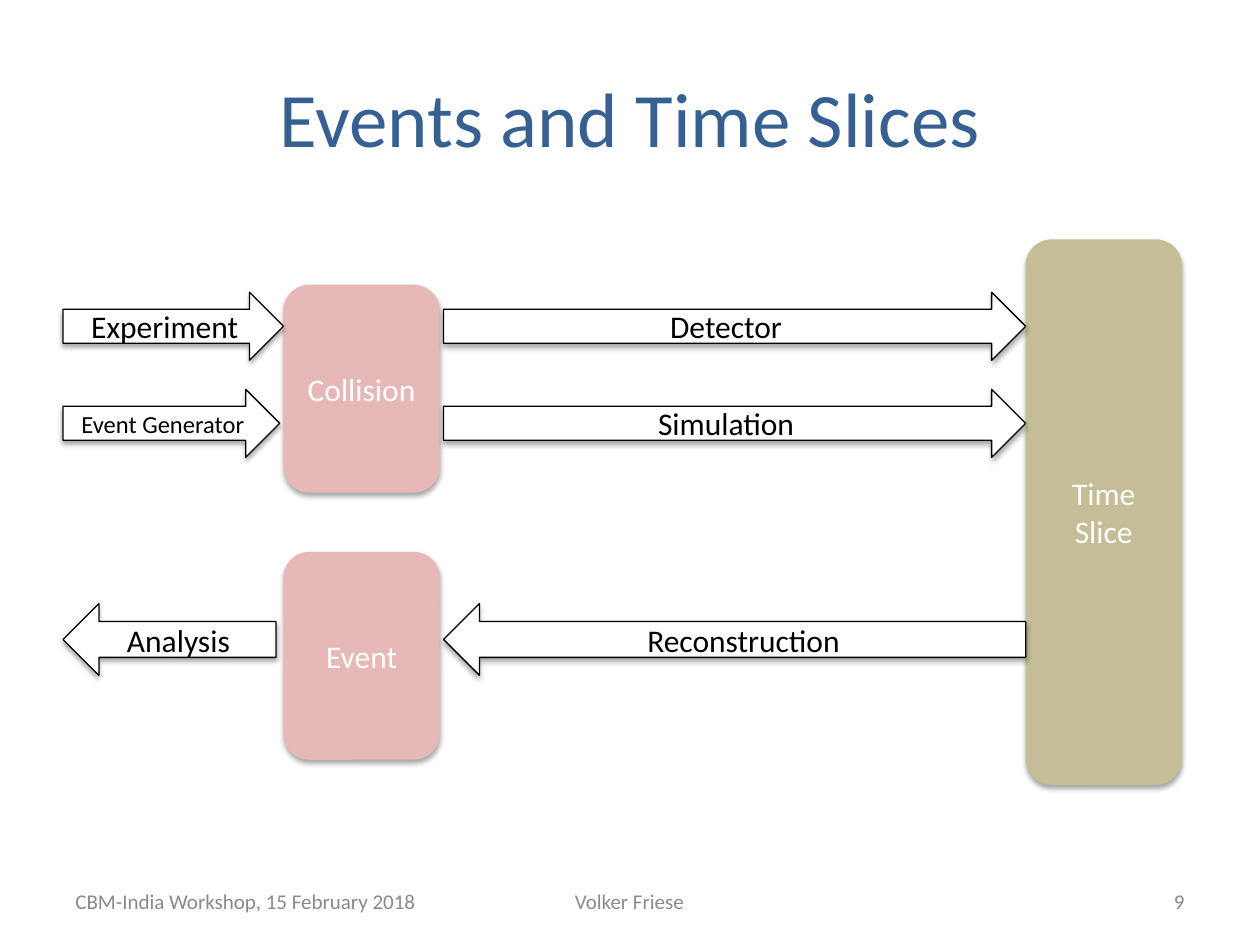
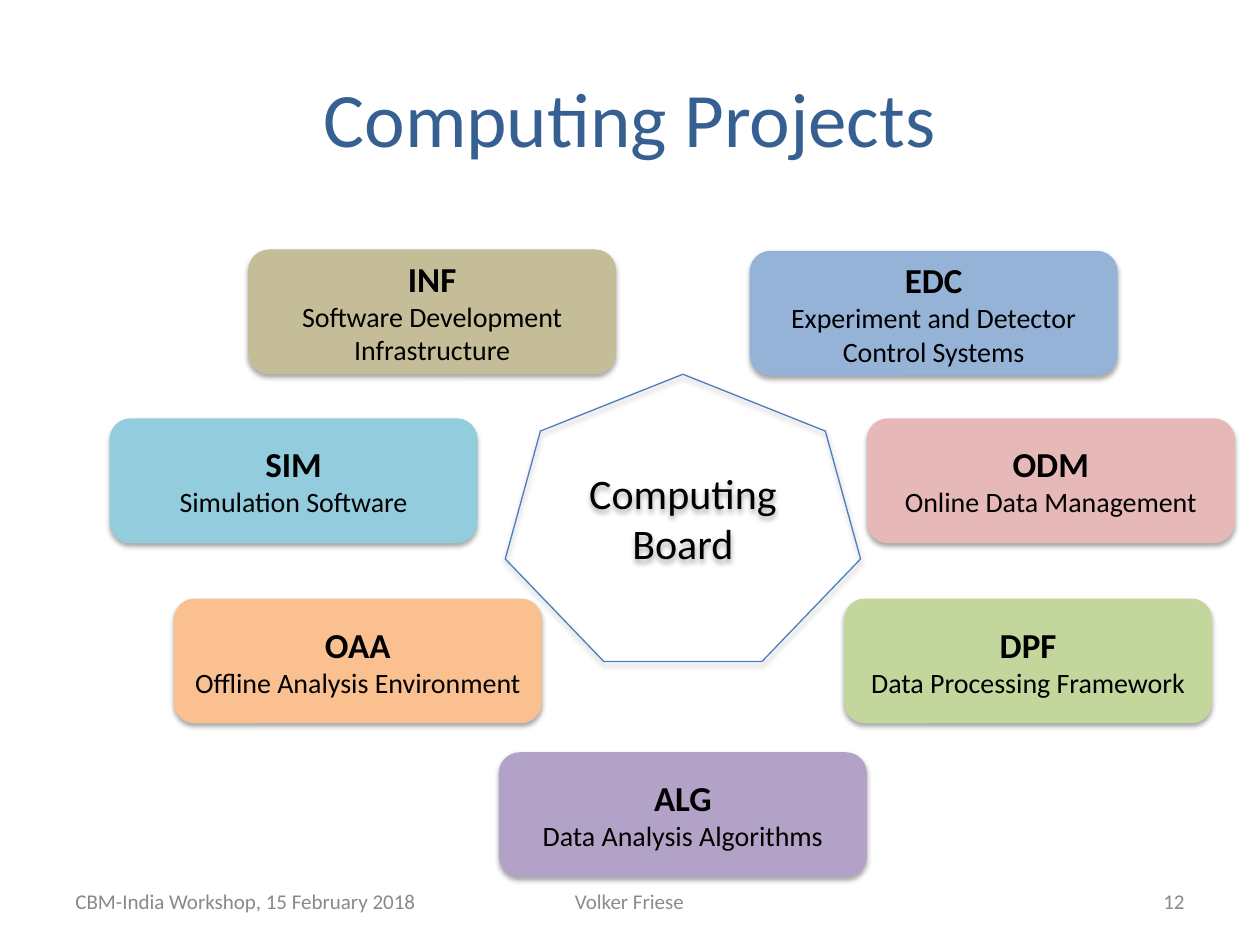
import lxml.etree
import pptx
import pptx.dml.color
import pptx.enum.shapes
import pptx.enum.text
import pptx.oxml.ns
import pptx.util

Inches = pptx.util.Inches
SHAPE = pptx.enum.shapes.MSO_SHAPE
ALIGN = pptx.enum.text.PP_ALIGN
qn = pptx.oxml.ns.qn

# Shared look
FONT = "Calibri"
TITLE_BLUE, OUTLINE_BLUE = "376092", "4B7EBC"
FOOTER_GREY, AUTHOR_GREY = "898989", "8C8C8C"
BLACK, WHITE = "000000", "FFFFFF"
ROSE, SAND = "E6B9B8", "C4BD97"
SKY, GREEN, PURPLE = "95B3D7", "C3D69B", "B3A2C7"
AQUA, ORANGE = "93CDDD", "FAC090"


def rgb(hex_color):
    return pptx.dml.color.RGBColor.from_string(hex_color)


def write(shape, lines, color, align=ALIGN.CENTER):
    """Fill a shape with (text, size, bold) lines, one paragraph each."""
    tf = shape.text_frame
    tf.word_wrap = True
    tf.vertical_anchor = pptx.enum.text.MSO_ANCHOR.MIDDLE
    for i, (text, size, bold) in enumerate(lines):
        p = tf.add_paragraph() if i else tf.paragraphs[0]
        p.text = text
        p.alignment = align
        p.font.name = FONT
        p.font.size = pptx.util.Pt(size)
        p.font.bold = bold
        p.font.color.rgb = rgb(color)


def add_text(s, box, text, size, color, align=ALIGN.CENTER):
    tb = s.shapes.add_textbox(*map(Inches, box))
    write(tb, [(text, size, False)], color, align)


def add_shadow(sp):
    """Soft shadow straight below the shape."""
    sp.shadow.inherit = False
    effects = sp._element.spPr.find(qn("a:effectLst"))
    shadow = lxml.etree.SubElement(
        effects, qn("a:outerShdw"), blurRad=str(pptx.util.Pt(3.1)),
        dist=str(pptx.util.Pt(1.8)), dir="5400000", rotWithShape="0")
    color = lxml.etree.SubElement(shadow, qn("a:srgbClr"), val=BLACK)
    lxml.etree.SubElement(color, qn("a:alpha"), val="35000")


def add_shape(s, kind, box, lines, color, fill=None, line=None):
    sp = s.shapes.add_shape(kind, *map(Inches, box))
    if fill:
        sp.fill.solid()
        sp.fill.fore_color.rgb = rgb(fill)
    else:
        sp.fill.background()
    if line:
        sp.line.color.rgb = rgb(line)
        sp.line.width = pptx.util.Pt(0.75)
    else:
        sp.line.fill.background()
    add_shadow(sp)
    write(sp, lines, color)


def add_stage(s, box, *words, fill):
    lines = [(word, 18, False) for word in words]
    add_shape(s, SHAPE.ROUNDED_RECTANGLE, box, lines, WHITE, fill)


def add_arrow(s, kind, box, text, size=18):
    add_shape(s, kind, box, [(text, size, False)], BLACK, WHITE, BLACK)


def add_project(s, left, top, code, name, fill):
    add_shape(s, SHAPE.ROUNDED_RECTANGLE, (left, top, 2.92, 0.99),
              [(code, 20, True), (name, 16, False)], BLACK, fill)


def new_slide(prs, title, number):
    """Blank slide with the common title and footer."""
    s = prs.slides.add_slide(prs.slide_layouts[6])
    add_text(s, (0.5, 0.3, 9, 1.25), title, 44, TITLE_BLUE)
    add_text(s, (0.5, 6.95, 2.92, 0.4), "CBM-India Workshop, 15 February 2018",
             12, FOOTER_GREY, ALIGN.LEFT)
    add_text(s, (4.35, 6.95, 1.29, 0.4), "Volker Friese", 12, AUTHOR_GREY)
    add_text(s, (7.17, 6.95, 2.33, 0.4), str(number), 12, FOOTER_GREY,
             ALIGN.RIGHT)
    return s


def events_slide(prs):
    s = new_slide(prs, "Events and Time Slices", 9)

    # Data stages
    add_stage(s, (2.25, 2.26, 1.24, 1.65), "Collision", fill=ROSE)
    add_stage(s, (2.25, 4.38, 1.24, 1.65), "Event", fill=ROSE)
    add_stage(s, (8.14, 1.9, 1.24, 4.33), "Time", "Slice", fill=SAND)

    # Each row: direction, top, height, outer arrow, inner arrow
    right, left = SHAPE.RIGHT_ARROW, SHAPE.LEFT_ARROW
    rows = [
        (right, 2.32, 0.54, "Experiment", 1.75, 18, "Detector"),
        (right, 3.09, 0.54, "Event Generator", 1.72, 14, "Simulation"),
        (left, 4.79, 0.57, "Analysis", 1.69, 18, "Reconstruction"),
    ]
    for kind, top, height, outer, width, size, inner in rows:
        add_arrow(s, kind, (0.5, top, width, height), outer, size)
        add_arrow(s, kind, (3.52, top, 4.62, height), inner)


def projects_slide(prs):
    s = new_slide(prs, "Computing Projects", 12)

    # Projects clockwise around the board
    projects = [
        (5.95, 1.99, "EDC", "Experiment and Detector\vControl Systems", SKY),
        (6.88, 3.32, "ODM", "Online Data Management", ROSE),
        (6.7, 4.75, "DPF", "Data Processing Framework", GREEN),
        (3.96, 5.97, "ALG", "Data Analysis Algorithms", PURPLE),
        (1.38, 4.75, "OAA", "Offline Analysis Environment", ORANGE),
        (0.87, 3.32, "SIM", "Simulation Software", AQUA),
        (1.97, 1.98, "INF", "Software Development Infrastructure", SAND),
    ]
    for project in projects:
        add_project(s, *project)

    # Board in the centre
    add_shape(s, SHAPE.HEPTAGON, (4.01, 2.97, 2.82, 2.28),
              [("Computing", 24, False), ("Board", 24, False)],
              BLACK, line=OUTLINE_BLUE)


def main():
    prs = pptx.Presentation()
    prs.slide_width, prs.slide_height = Inches(10), Inches(7.5)
    events_slide(prs)
    projects_slide(prs)
    prs.save("out.pptx")


if __name__ == "__main__":
    main()
